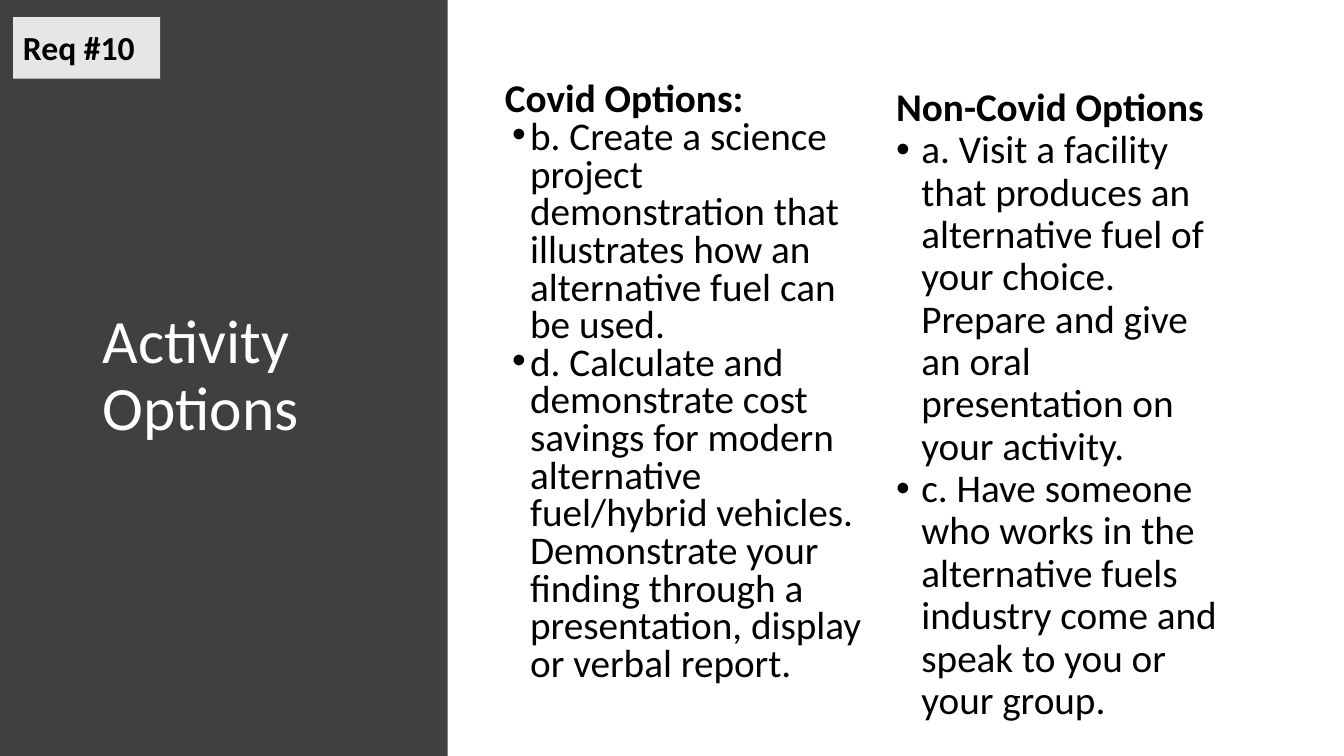
from dataclasses import dataclass

from lxml import etree
from pptx import Presentation
from pptx.dml.color import RGBColor
from pptx.enum.shapes import MSO_SHAPE
from pptx.enum.text import MSO_ANCHOR, PP_ALIGN
from pptx.oxml.ns import qn
from pptx.util import Inches, Pt

RECT = MSO_SHAPE.RECTANGLE
TOP, MIDDLE = MSO_ANCHOR.TOP, MSO_ANCHOR.MIDDLE
LEFT = PP_ALIGN.LEFT
FONT = "Calibri"
COLORS = {"panel": "404040", "tag": "E7E6E6", "dark": "000000", "light": "FFFFFF"}


@dataclass
class OptionColumn:
    heading: str
    items: list[str]
    box: tuple[float, float, float, float]
    inset: float
    spacing: float
    hanging: float


COLUMNS = [
    OptionColumn(
        "Covid Options:",
        [
            "b. Create a science project demonstration that illustrates "
            "how an alternative fuel can be used.",
            "d. Calculate and demonstrate cost savings for modern alternative "
            "fuel/hybrid vehicles. Demonstrate your finding through a "
            "presentation, display or verbal report.",
        ],
        (4.91, 0.77, 3.75, 6.12), 0.05, 0.8, 0.18,
    ),
    OptionColumn(
        "Non-Covid Options",
        [
            "a. Visit a facility that produces an alternative fuel of your "
            "choice. Prepare and give an oral presentation on your activity.",
            "c. Have someone who works in the alternative fuels industry "
            "come and speak to you or your group.",
        ],
        (8.79, 0.77, 3.56, 6.56), 0.1, 0.9, 0.32,
    ),
]


def add_rect(s, box, color):
    sp = s.shapes.add_shape(RECT, *map(Inches, box))
    sp.shadow.inherit = False
    sp.fill.solid()
    sp.fill.fore_color.rgb = RGBColor.from_string(COLORS[color])
    sp.line.fill.background()
    return sp


def set_frame(sp, inset=0.05, anchor=TOP):
    tf = sp.text_frame
    tf.word_wrap = True
    tf.vertical_anchor = anchor
    tf.margin_left = tf.margin_right = Inches(0.1)
    tf.margin_top = tf.margin_bottom = Inches(inset)
    return tf


def write(p, text, *, size=28, color="dark", bold=False, spacing=1.0):
    p.alignment = LEFT
    p.line_spacing = spacing
    p.space_before = p.space_after = Pt(0)
    r = p.add_run()
    r.text = text
    r.font.name = FONT
    r.font.size = Pt(size)
    r.font.bold = bold
    r.font.color.rgb = RGBColor.from_string(COLORS[color])


def add_bullet(p, hanging: float):
    pPr = p._p.get_or_add_pPr()
    pPr.set("marL", str(Inches(0.25)))
    pPr.set("indent", str(-Inches(hanging)))
    clr = etree.SubElement(pPr, qn("a:buClr"))
    etree.SubElement(clr, qn("a:srgbClr"), val=COLORS["dark"])
    etree.SubElement(pPr, qn("a:buFont"), typeface="Arial")
    etree.SubElement(pPr, qn("a:buChar"), char="•")


def add_column(s, column: OptionColumn):
    sp = s.shapes.add_textbox(*map(Inches, column.box))
    tf = set_frame(sp, column.inset)
    write(tf.paragraphs[0], column.heading, bold=True, spacing=column.spacing)
    for item in column.items:
        p = tf.add_paragraph()
        write(p, item, spacing=column.spacing)
        add_bullet(p, column.hanging)


def main():
    prs = Presentation()
    prs.slide_width, prs.slide_height = Inches(13.33), Inches(7.5)
    s = prs.slides.add_slide(prs.slide_layouts[6])

    add_rect(s, (0, 0, 4.44, 7.5), "panel")
    title = s.shapes.add_textbox(*map(Inches, (0.92, 0.4, 3.25, 6.68)))
    tf = set_frame(title, anchor=MIDDLE)
    write(tf.paragraphs[0], "Activity Options", size=44, color="light", spacing=0.9)

    tag = add_rect(s, (0.13, 0.17, 1.46, 0.61), "tag")
    write(set_frame(tag, 0.1).paragraphs[0], "Req #10", size=24, bold=True)

    for column in COLUMNS:
        add_column(s, column)

    prs.save("out.pptx")


if __name__ == "__main__":
    main()
